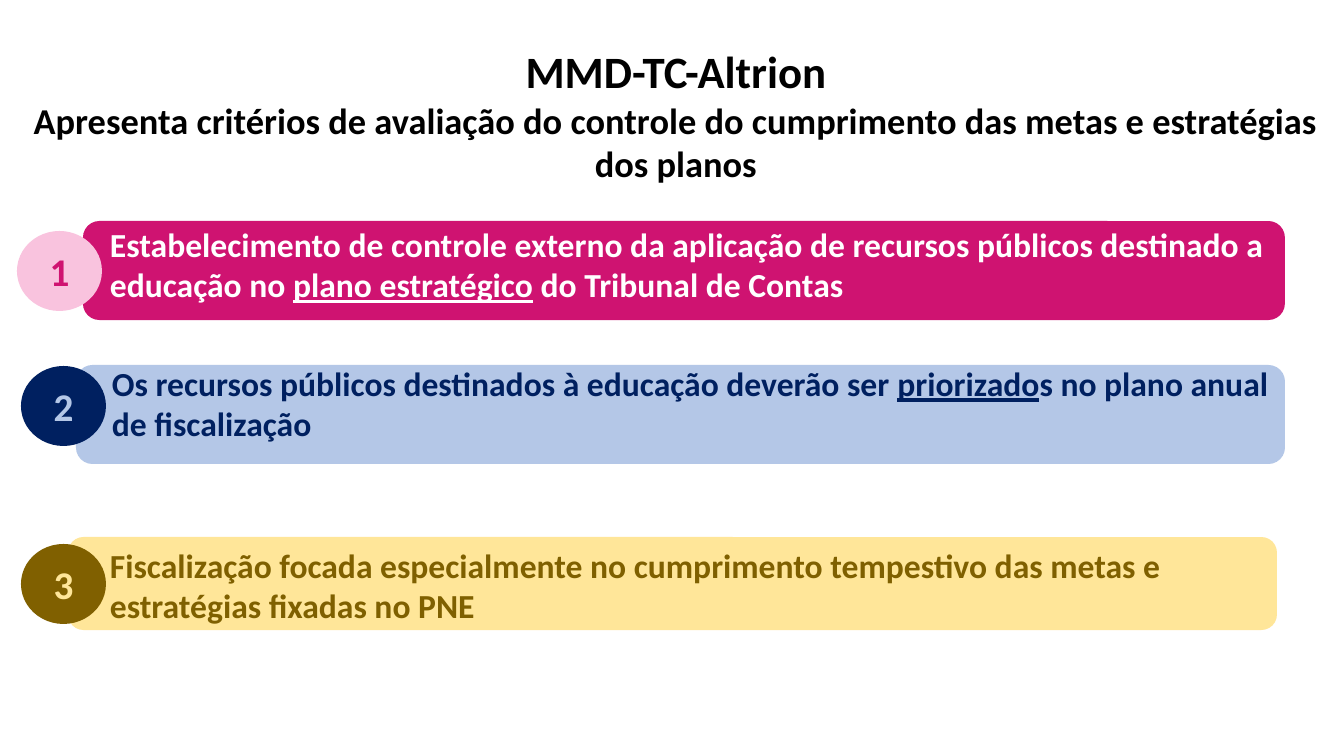
from pptx import Presentation
from pptx import util as u
from pptx.dml.color import RGBColor
from pptx.enum import shapes, text

# Content: runs are (wording, underlined); boxes are (left, top, width, height) in px
COLORS = {
    "black": "000000", "white": "FFFFFF",
    "pink": "CF1371", "pale_pink": "F9C3DE",
    "navy": "002060", "pale_blue": "B4C7E7",
    "brown": "806000", "olive": "7F6000", "pale_yellow": "FFE699",
}
FONT = "Calibri"
TITLE_BOX = (17, 39, 1318, 151)
TITLE_LINES = [
    ("MMD-TC-Altrion", 32),
    ("Apresenta critérios de avaliação do controle do cumprimento das metas "
     "e estratégias dos planos", 26),
]
CRITERIA = [
    dict(bar=(83, 221, 1202, 99), bar_color="pink",
         badge=(17, 231), badge_color="pale_pink", number_color="pink",
         label=(100, 219, 1176, 91), label_color="white",
         runs=[("Estabelecimento de controle externo da aplicação de recursos "
                "públicos destinado a educação no ", False),
               ("plano estratégico", True),
               (" do Tribunal de Contas", False)]),
    dict(bar=(76, 365, 1209, 99), bar_color="pale_blue",
         badge=(21, 366), badge_color="navy", number_color="pale_blue",
         label=(102, 358, 1182, 91), label_color="navy",
         runs=[("Os recursos públicos destinados à educação deverão ser ", False),
               ("priorizado", True),
               ("s no plano anual de fiscalização", False)]),
    dict(bar=(68, 537, 1209, 93), bar_color="pale_yellow",
         badge=(21, 544), badge_color="brown", number_color="pale_yellow",
         label=(100, 540, 1182, 91), label_color="olive",
         runs=[("Fiscalização focada especialmente no cumprimento tempestivo "
                "das metas e estratégias fixadas no PNE", False)]),
]
BADGE_SIZE = (85, 80)
LABEL_SIZE, NUMBER_SIZE = 24, 28
PX = 914400 / 100.8


def emu(box):
    return [u.Emu(round(value * PX)) for value in box]


def add_run(paragraph, wording, size, color, underlined=False):
    run = paragraph.add_run()
    run.text = wording
    run.font.name = FONT
    run.font.size = u.Pt(size)
    run.font.bold = True
    run.font.color.rgb = RGBColor.from_string(COLORS[color])
    if underlined:
        run.font.underline = True


def add_filled(slide, kind, box, color):
    shape = slide.shapes.add_shape(kind, *emu(box))
    shape.shadow.inherit = False
    shape.fill.solid()
    shape.fill.fore_color.rgb = RGBColor.from_string(COLORS[color])
    shape.line.fill.background()
    return shape


def add_text_frame(slide, box):
    frame = slide.shapes.add_textbox(*emu(box)).text_frame
    frame.word_wrap = True
    return frame


def add_criterion(slide, number, item):
    # Bar
    add_filled(slide, shapes.MSO_SHAPE.ROUNDED_RECTANGLE, item["bar"], item["bar_color"])

    # Numbered badge
    badge = add_filled(slide, shapes.MSO_SHAPE.OVAL, item["badge"] + BADGE_SIZE,
                       item["badge_color"])
    badge.text_frame.vertical_anchor = text.MSO_ANCHOR.MIDDLE
    paragraph = badge.text_frame.paragraphs[0]
    paragraph.alignment = text.PP_ALIGN.CENTER
    add_run(paragraph, str(number), NUMBER_SIZE, item["number_color"])

    # Label
    paragraph = add_text_frame(slide, item["label"]).paragraphs[0]
    for wording, underlined in item["runs"]:
        add_run(paragraph, wording, LABEL_SIZE, item["label_color"], underlined)


def add_title(slide):
    frame = add_text_frame(slide, TITLE_BOX)
    for index, (wording, size) in enumerate(TITLE_LINES):
        paragraph = frame.add_paragraph() if index else frame.paragraphs[0]
        paragraph.alignment = text.PP_ALIGN.CENTER
        add_run(paragraph, wording, size, "black")


def main():
    presentation = Presentation()
    presentation.slide_width, presentation.slide_height = emu((1344, 756))
    slide = presentation.slides.add_slide(presentation.slide_layouts[6])
    for number, item in enumerate(CRITERIA, start=1):
        add_criterion(slide, number, item)
    add_title(slide)
    presentation.save("out.pptx")


if __name__ == "__main__":
    main()
